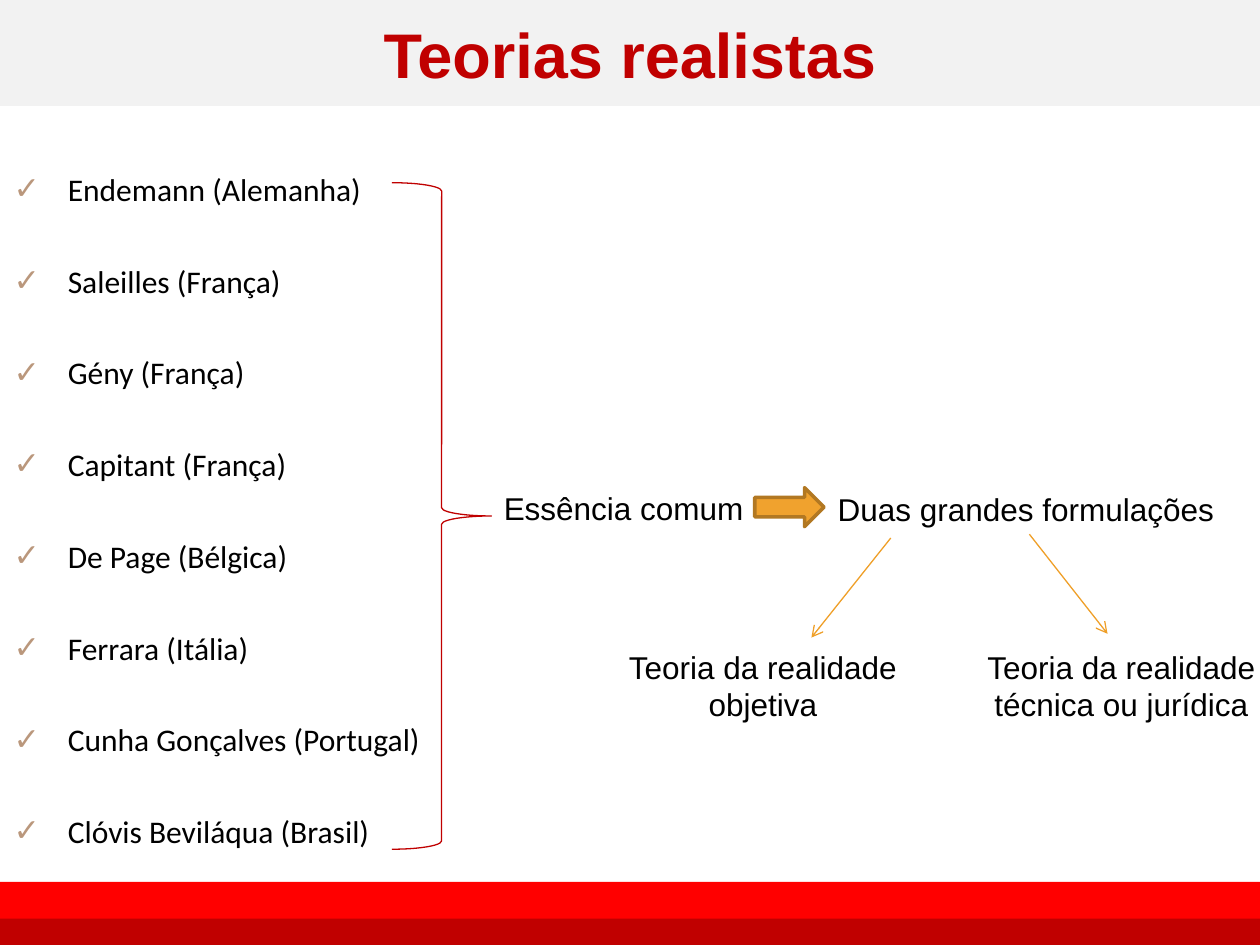
from dataclasses import dataclass

from lxml import etree
from pptx import Presentation
from pptx.dml.color import RGBColor
from pptx.enum.shapes import MSO_CONNECTOR, MSO_SHAPE
from pptx.enum.text import MSO_ANCHOR, PP_ALIGN
from pptx.oxml.ns import qn
from pptx.util import Inches, Pt

RECTANGLE = MSO_SHAPE.RECTANGLE
RIGHT_BRACE = MSO_SHAPE.RIGHT_BRACE
RIGHT_ARROW = MSO_SHAPE.RIGHT_ARROW
STRAIGHT = MSO_CONNECTOR.STRAIGHT
LEFT, CENTER = PP_ALIGN.LEFT, PP_ALIGN.CENTER
MIDDLE = MSO_ANCHOR.MIDDLE


@dataclass(frozen=True)
class Theme:
    header: str = "F2F2F2"
    dark_red: str = "C00000"
    red: str = "FF0000"
    text: str = "000000"
    check: str = "BA977C"
    arrow: str = "F0A22E"
    arrow_edge: str = "B27822"
    connector: str = "EF9F28"
    heading_font: str = "Arial"
    list_font: str = "Calibri"
    title_size: int = 36
    body_size: int = 18
    thin: float = 0.75
    thick: float = 2


class SlideBuilder:
    def __init__(self, slide, theme):
        self.shapes = slide.shapes
        self.theme = theme

    def add_run(self, para, text, font=None, size=None, color=None, bold=False):
        span = para.add_run()
        span.text = text
        span.font.name = font or self.theme.heading_font
        span.font.size = Pt(size or self.theme.body_size)
        span.font.color.rgb = RGBColor.from_string(color or self.theme.text)
        span.font.bold = bold

    def shape(self, kind, left, top, width, height, fill=None, line=None, weight=0):
        shape = self.shapes.add_shape(
            kind, Inches(left), Inches(top), Inches(width), Inches(height))
        shape.shadow.inherit = False
        if fill:
            shape.fill.solid()
            shape.fill.fore_color.rgb = RGBColor.from_string(fill)
        else:
            shape.fill.background()
        if line:
            shape.line.color.rgb = RGBColor.from_string(line)
            shape.line.width = Pt(weight)
        else:
            shape.line.fill.background()
        return shape

    def title(self, text, width, height):
        box = self.shape(RECTANGLE, 0, 0, width, height, fill=self.theme.header)
        box.text_frame.vertical_anchor = MIDDLE
        para = box.text_frame.paragraphs[0]
        para.alignment = CENTER
        self.add_run(para, text, size=self.theme.title_size,
                     color=self.theme.dark_red, bold=True)

    def text_box(self, left, top, width, height):
        box = self.shapes.add_textbox(
            Inches(left), Inches(top), Inches(width), Inches(height))
        box.text_frame.word_wrap = True
        return box.text_frame

    def label(self, text, left, top, width, height, alignment=LEFT):
        para = self.text_box(left, top, width, height).paragraphs[0]
        para.alignment = alignment
        self.add_run(para, text)

    def checklist(self, items, left, top, width, height, indent):
        frame = self.text_box(left, top, width, height)
        for index, item in enumerate(items):
            para = frame.add_paragraph() if index else frame.paragraphs[0]
            para.line_spacing = 1.5
            para.space_before = para.space_after = Pt(10)
            self.add_check(para, indent)
            self.add_run(para, item, font=self.theme.list_font)

    def add_check(self, para, indent):
        properties = para._p.get_or_add_pPr()
        properties.set("marL", str(Inches(indent)))
        properties.set("indent", str(-Inches(indent)))
        color = etree.SubElement(properties, qn("a:buClr"))
        etree.SubElement(color, qn("a:srgbClr"), val=self.theme.check)
        etree.SubElement(properties, qn("a:buFont"), typeface=self.theme.heading_font)
        etree.SubElement(properties, qn("a:buChar"), char="✓")

    def arrow_line(self, start, end):
        points = [Inches(value) for value in (*start, *end)]
        connector = self.shapes.add_connector(STRAIGHT, *points)
        connector.line.color.rgb = RGBColor.from_string(self.theme.connector)
        connector.line.width = Pt(self.theme.thin)
        etree.SubElement(connector.line._get_or_add_ln(), qn("a:tailEnd"), type="arrow")
        etree.SubElement(connector._element.spPr, qn("a:effectLst"))


def main():
    theme = Theme()
    deck = Presentation()
    deck.slide_width, deck.slide_height = Inches(10), Inches(7.5)
    page = SlideBuilder(deck.slides.add_slide(deck.slide_layouts[6]), theme)

    # Title band
    page.title("Teorias realistas", 10, 0.84)

    # Authors
    authors = [
        "Endemann (Alemanha)",
        "Saleilles (França)",
        "Gény (França)",
        "Capitant (França)",
        "De Page (Bélgica)",
        "Ferrara (Itália)",
        "Cunha Gonçalves (Portugal)",
        "Clóvis Beviláqua (Brasil)",
    ]
    page.checklist(authors, 0.01, 1.15, 9.99, 5.61, indent=0.43)

    # Footer bands
    page.shape(RECTANGLE, 0, 7, 10, 0.3, fill=theme.red)
    page.shape(RECTANGLE, 0, 7.29, 10, 0.21, fill=theme.dark_red)

    # From the authors to their common essence
    page.shape(RIGHT_BRACE, 3.11, 1.45, 0.79, 5.29,
               line=theme.dark_red, weight=theme.thin)
    page.label("Essência comum", 3.9, 3.83, 2.13, 0.4)
    page.shape(RIGHT_ARROW, 5.99, 3.87, 0.55, 0.31, fill=theme.arrow,
               line=theme.arrow_edge, weight=theme.thick)
    page.label("Duas grandes formulações", 6.55, 3.84, 3.23, 0.4)

    # The two formulations
    branches = [
        ("Teoria da realidade objetiva", 4.76, 2.59, (7.07, 4.27), (6.44, 5.06)),
        ("Teoria da realidade técnica ou jurídica", 7.68, 2.44, (8.17, 4.24), (8.79, 5.03)),
    ]
    for text, left, width, start, end in branches:
        page.arrow_line(start, end)
        page.label(text, left, 5.09, width, 0.71, CENTER)

    deck.save("out.pptx")


if __name__ == "__main__":
    main()
